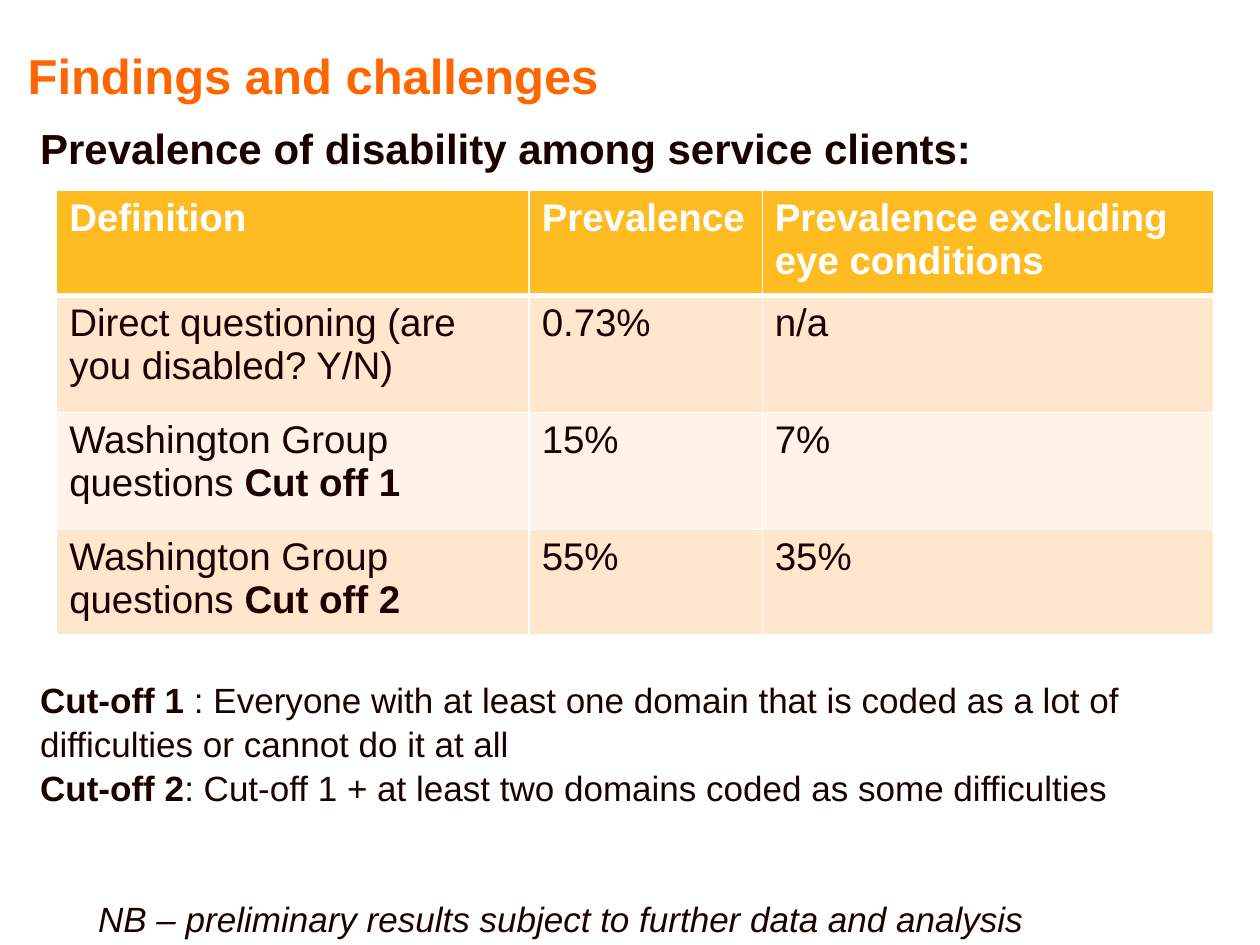
import pptx
import pptx.dml.color
import pptx.oxml.ns
import pptx.util
from dataclasses import dataclass
from lxml import etree

Inches = pptx.util.Inches


@dataclass(frozen=True)
class Theme:
    """Colours, font and type sizes of the slide."""
    font: str = "Arial"
    accent: str = "FF6600"
    ink: str = "1C0000"
    white: str = "FFFFFF"
    head: str = "FFBB22"
    bands: tuple = ("FFE7CD", "FFF3E8")
    title: int = 28
    lead: int = 24
    cell: int = 22
    note: int = 20


THEME = Theme()


def color(code):
    """Turn a hex code into a colour."""
    return pptx.dml.color.RGBColor.from_string(code)


def write(para, parts, size, tint=THEME.ink, bold=False, italic=False):
    """Fill a paragraph with (text, bold) parts in one style."""
    para.font.name = THEME.font
    para.font.size = pptx.util.Pt(size)
    para.font.color.rgb = color(tint)
    para.font.bold = bold
    para.font.italic = italic
    for text, strong in parts:
        run = para.add_run()
        run.text = text
        if strong:
            run.font.bold = True


def frame(slide, box, inset=True):
    """Add a wrapping text box and return its text frame."""
    body = slide.shapes.add_textbox(*map(Inches, box)).text_frame
    body.word_wrap = True
    if not inset:
        body.margin_left = body.margin_right = 0
        body.margin_top = body.margin_bottom = 0
    return body


def line(slide, box, text, size, inset=True, **style):
    """Place a single paragraph of text in a box."""
    write(frame(slide, box, inset).paragraphs[0], [(text, False)], size, **style)


def notes(slide, box, items):
    """Place the cut-off definitions, one paragraph each."""
    body = frame(slide, box)
    for i, (term, text) in enumerate(items):
        para = body.add_paragraph() if i else body.paragraphs[0]
        para.line_spacing = 1.05
        write(para, [(term, True), (text, False)], THEME.note)


def border(cell, widths):
    """Draw white borders of the given widths round a cell."""
    props = cell._tc.get_or_add_tcPr()
    qn = pptx.oxml.ns.qn
    for side, width in zip("LRTB", widths):
        edge = etree.SubElement(props, qn(f"a:ln{side}"), w=str(pptx.util.Pt(width)))
        fill = etree.SubElement(edge, qn("a:solidFill"))
        etree.SubElement(fill, qn("a:srgbClr"), val=THEME.white)


def grid(slide, box, cols, heights, rows):
    """Place the prevalence table with a header and banded rows."""
    table = slide.shapes.add_table(len(rows), len(cols), *map(Inches, box)).table
    for col, width in zip(table.columns, cols):
        col.width = Inches(width)
    for r, (row, height) in enumerate(zip(rows, heights)):
        table.rows[r].height = Inches(height)
        top = r == 0
        for c, parts in enumerate(row):
            cell = table.cell(r, c)
            border(cell, (1, 1, 3 if r == 1 else 1, 3 if top else 1))
            cell.fill.solid()
            cell.fill.fore_color.rgb = color(THEME.head if top else THEME.bands[(r - 1) % 2])
            if isinstance(parts, str):
                parts = [(parts, False)]
            write(cell.text_frame.paragraphs[0], parts, THEME.cell,
                  THEME.white if top else THEME.ink, bold=top)


def main():
    """Build the slide and save it."""
    deck = pptx.Presentation()
    deck.slide_width, deck.slide_height = Inches(10), Inches(7.5)
    slide = deck.slides.add_slide(deck.slide_layouts[6])
    line(slide, (0.22, 0.36, 6.56, 0.5), "Findings and challenges",
         THEME.title, inset=False, tint=THEME.accent, bold=True)
    line(slide, (0.22, 0.92, 9.62, 0.5),
         "Prevalence of disability among service clients:", THEME.lead, bold=True)
    group = "Washington Group questions "
    grid(slide, (0.45, 1.51, 9.18, 3.51), (3.75, 1.85, 3.58), (0.82, 0.93, 0.93, 0.83), [
        ("Definition", "Prevalence", "Prevalence excluding eye conditions"),
        ("Direct questioning (are you disabled? Y/N)", "0.73%", "n/a"),
        ([(group, False), ("Cut off 1", True)], "15%", "7%"),
        ([(group, False), ("Cut off 2", True)], "55%", "35%"),
    ])
    notes(slide, (0.22, 5.32, 9.62, 1.1), [
        ("Cut-off 1", " : Everyone with at least one domain that is coded"
                      " as a lot of difficulties or cannot do it at all"),
        ("Cut-off 2", ": Cut-off 1 + at least two domains coded as some difficulties"),
    ])
    line(slide, (0.68, 7.07, 8.69, 0.43),
         "NB – preliminary results subject to further data and analysis",
         THEME.note, italic=True)
    deck.save("out.pptx")


if __name__ == "__main__":
    main()
